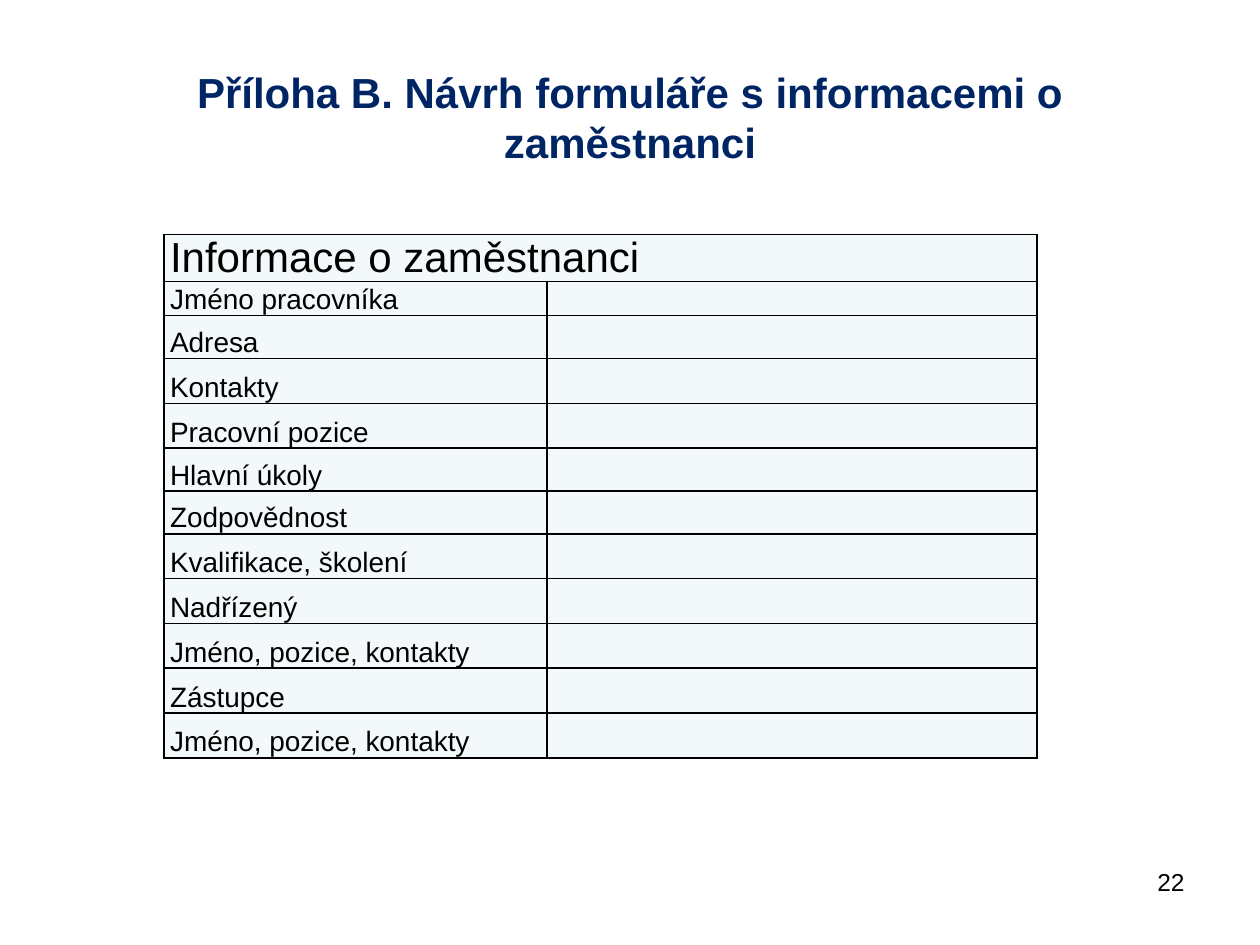
"""Build a slide with an employee information form."""
from dataclasses import dataclass

from lxml import etree
from pptx import Presentation
from pptx.dml import color
from pptx.enum import text
from pptx.oxml import ns
from pptx.util import Pt

FONT = "Arial"
BLACK = "000000"
NAVY = "002565"
CELL_FILL = "F3F9FA"
COLUMN_WIDTHS = (219, 280)


@dataclass(frozen=True)
class FormRow:
    label: str
    height: float = 25.6
    size: float = 16
    heading: bool = False


FORM_ROWS = (
    FormRow("Informace o zaměstnanci", 23, 24, True),
    FormRow("Jméno pracovníka", 19.5),
    FormRow("Adresa", 24.5),
    FormRow("Kontakty"),
    FormRow("Pracovní pozice"),
    FormRow("Hlavní úkoly", 24.5),
    FormRow("Zodpovědnost", 24.5),
    FormRow("Kvalifikace, školení"),
    FormRow("Nadřízený"),
    FormRow("Jméno, pozice, kontakty"),
    FormRow("Zástupce"),
    FormRow("Jméno, pozice, kontakty"),
)


def rgb(value: str) -> color.RGBColor:
    return color.RGBColor.from_string(value)


def write(frame, content: str, *, size: float, align, anchor,
          fill: str = BLACK, bold: bool = False) -> None:
    frame.word_wrap = True
    frame.vertical_anchor = anchor
    paragraph = frame.paragraphs[0]
    paragraph.alignment = align
    run = paragraph.add_run()
    run.text = content
    run.font.name = FONT
    run.font.size = Pt(size)
    run.font.bold = bold
    run.font.color.rgb = rgb(fill)


def add_borders(cell) -> None:
    properties = cell._tc.get_or_add_tcPr()
    for side in ("lnL", "lnR", "lnT", "lnB"):
        line = etree.SubElement(properties, ns.qn(f"a:{side}"), w=str(Pt(1)))
        fill = etree.SubElement(line, ns.qn("a:solidFill"))
        etree.SubElement(fill, ns.qn("a:srgbClr"), val=BLACK)


def format_cell(cell, content: str, size: float) -> None:
    cell.margin_left = cell.margin_right = Pt(3.6)
    cell.margin_top = cell.margin_bottom = 0
    add_borders(cell)
    cell.fill.solid()
    cell.fill.fore_color.rgb = rgb(CELL_FILL)
    if content:
        cell.vertical_anchor = text.MSO_ANCHOR.BOTTOM
        paragraph_frame = cell.text_frame
        write(paragraph_frame, content, size=size, align=text.PP_ALIGN.JUSTIFY,
              anchor=text.MSO_ANCHOR.BOTTOM)
    else:
        paragraph = cell.text_frame.paragraphs[0]
        etree.SubElement(paragraph._p, ns.qn("a:endParaRPr"), sz=str(int(size * 100)))


def add_form(slide, rows: tuple[FormRow, ...]) -> None:
    height = sum(row.height for row in rows)
    table = slide.shapes.add_table(len(rows), len(COLUMN_WIDTHS), Pt(93.6), Pt(134),
                                   Pt(sum(COLUMN_WIDTHS)), Pt(height)).table
    table.first_row = table.horz_banding = False
    for column, width in zip(table.columns, COLUMN_WIDTHS):
        column.width = Pt(width)
    for index, row in enumerate(rows):
        table.rows[index].height = Pt(row.height)
        label_cell, entry_cell = table.cell(index, 0), table.cell(index, 1)
        format_cell(label_cell, row.label, row.size)
        format_cell(entry_cell, "", row.size)
        if row.heading:
            label_cell.merge(entry_cell)


def main() -> None:
    presentation = Presentation()
    presentation.slide_width, presentation.slide_height = Pt(720), Pt(540)
    slide = presentation.slides.add_slide(presentation.slide_layouts[5])
    title = slide.shapes.title
    title.left, title.top, title.width, title.height = Pt(36), Pt(21.6), Pt(648), Pt(90)
    title.text_frame.auto_size = text.MSO_AUTO_SIZE.NONE
    write(title.text_frame, "Příloha B. Návrh formuláře s informacemi o zaměstnanci",
          size=24, align=text.PP_ALIGN.CENTER, anchor=text.MSO_ANCHOR.MIDDLE,
          fill=NAVY, bold=True)
    add_form(slide, FORM_ROWS)
    page_number = slide.shapes.add_textbox(Pt(516), Pt(492), Pt(168), Pt(37.5))
    write(page_number.text_frame, "22", size=14, align=text.PP_ALIGN.RIGHT,
          anchor=text.MSO_ANCHOR.TOP)
    presentation.save("out.pptx")


if __name__ == "__main__":
    main()
